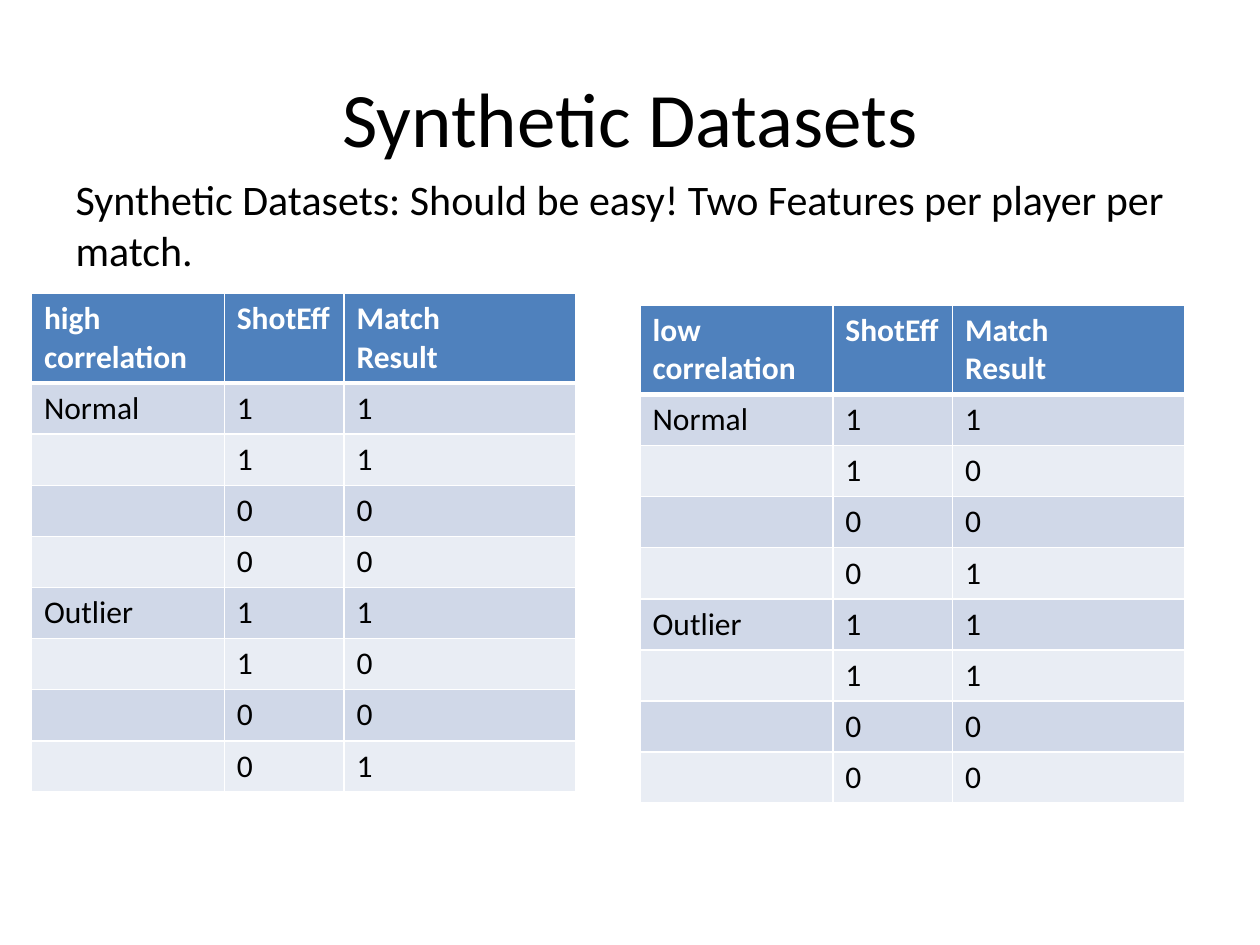
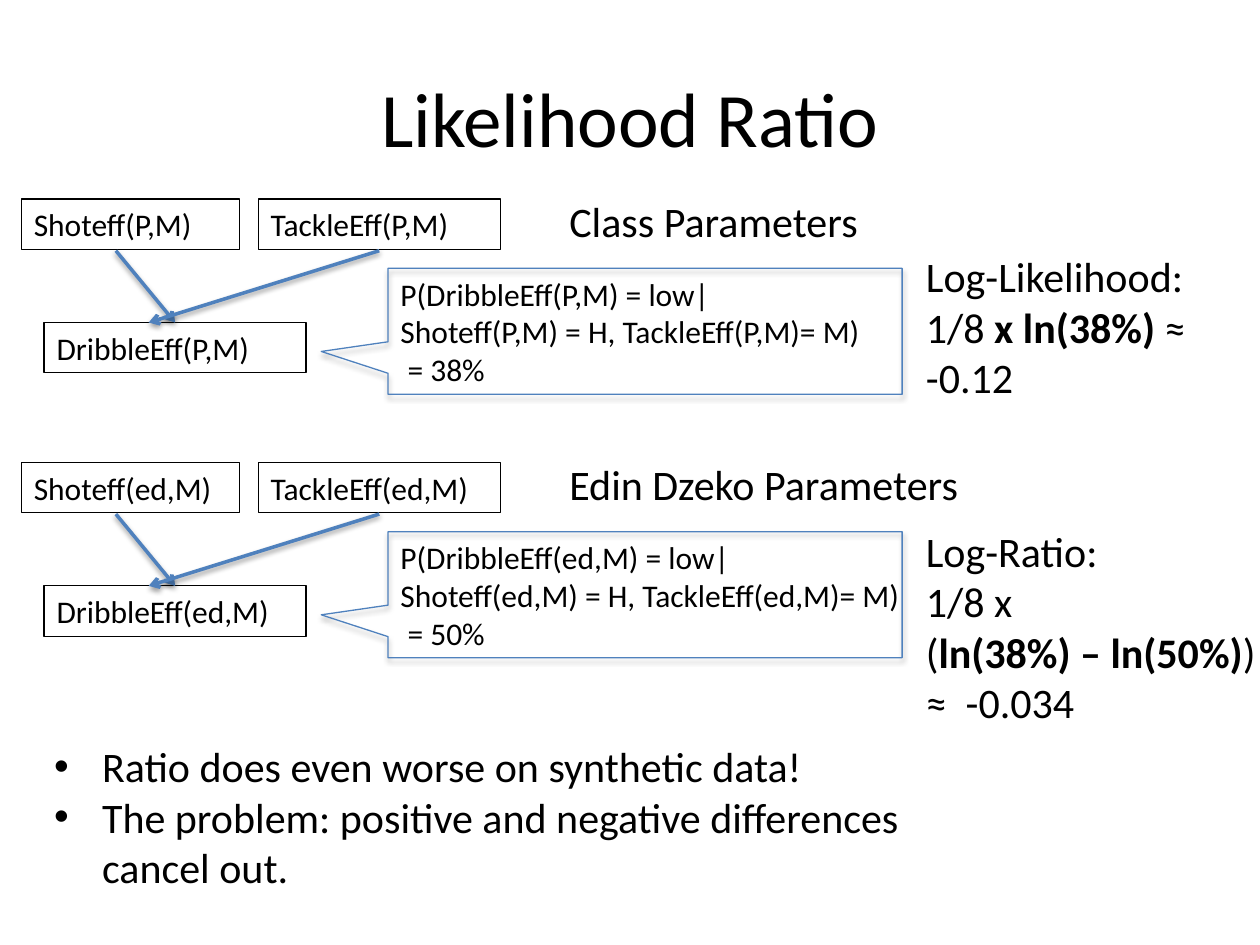
from lxml import etree
from pptx import Presentation
from pptx import util as u
from pptx.dml.color import RGBColor
from pptx.enum import shapes, text
from pptx.oxml import ns

BLACK, WHITE, BLUE = "000000", "FFFFFF", "4F81BD"
BANDS = ["D0D8E8", "E9EDF4"]
TITLE = {"size": u.Pt(44), "name": "Calibri"}
BODY = {"size": u.Pt(24), "name": "Calibri"}
SMALL = {"size": u.Pt(18), "name": "Calibri"}
HEAD = {**SMALL, "bold": True}
COLS = [1.53, 0.95, 1.84]
TABLE_H, HEAD_H = 3.94, 0.7


def rgb(code):
    """Turn a hex string into a colour."""
    return RGBColor.from_string(code)


def inches(*vals):
    """Turn plain numbers into lengths."""
    return [u.Inches(val) for val in vals]


def node(parent, tag, **attrs):
    """Append a drawing element with its attributes."""
    return etree.SubElement(parent, ns.qn(tag), {key: str(val) for key, val in attrs.items()})


def solid(parent, code, alpha=None):
    """Append a colour, with an opacity in percent if given."""
    mark = node(parent, "a:srgbClr", val=code)
    if alpha:
        node(mark, "a:alpha", val=alpha * 1000)


def shade(shape, alpha, dist):
    """Give a shape a soft shadow straight below it."""
    list_ = node(shape.element.spPr, "a:effectLst")
    drop = node(list_, "a:outerShdw", blurRad=u.Pt(3.1), dist=u.Pt(dist),
                dir=90 * 60000, rotWithShape=0)
    solid(drop, BLACK, alpha)


def style(font, form, color=BLACK):
    """Set font values from a dict, then the colour."""
    for key, val in form.items():
        setattr(font, key, val)
    font.color.rgb = rgb(color)


def write(frame, paras, form, color=BLACK):
    """Fill a frame; a paragraph is a string or a list of (string, bold)."""
    for num, para in enumerate(paras):
        line = frame.add_paragraph() if num else frame.paragraphs[0]
        for words, bold in [(para, form.get("bold", False))] if isinstance(para, str) else para:
            for part, piece in enumerate(words.split("\n")):
                if part:
                    line.add_line_break()
                run = line.add_run()
                run.text = piece
                style(run.font, {**form, "bold": bold}, color)


def place(holder, box, paras, form):
    """Move a placeholder and write its text."""
    holder.left, holder.top, holder.width, holder.height = inches(*box)
    holder.text_frame.auto_size = text.MSO_AUTO_SIZE.NONE
    write(holder.text_frame, paras, form)


def start(deck, title):
    """Add a slide with its title and return it with its body."""
    slide = deck.slides.add_slide(deck.slide_layouts[1])
    place(slide.shapes.title, (0.5, 0.3, 9, 1.25), [title], TITLE)
    return slide, slide.placeholders[1]


def indent(para, size, bullet=None):
    """Set a hanging indent and a bullet, or none."""
    props = para._p.get_or_add_pPr()
    props.set("marL", str(u.Inches(size)))
    props.set("indent", str(-u.Inches(size)))
    if bullet:
        node(props, "a:buChar", char=bullet)
    else:
        node(props, "a:buNone")


def note(parts, box, paras, form, edge=None):
    """Add a text box, outlined if an edge colour is given."""
    item = parts.add_textbox(*inches(*box))
    item.text_frame.word_wrap = True
    item.text_frame.auto_size = text.MSO_AUTO_SIZE.SHAPE_TO_FIT_TEXT
    write(item.text_frame, paras, form)
    if edge:
        item.line.color.rgb = rgb(edge)
        item.line.width = u.Pt(0.75)


def arrow(parts, ends):
    """Add a shadowed blue arrow."""
    line = parts.add_connector(shapes.MSO_CONNECTOR.STRAIGHT, *inches(*ends))
    line.line.color.rgb = rgb(BLUE)
    line.line.width = u.Pt(2)
    node(line.element.spPr.find(ns.qn("a:ln")), "a:tailEnd", type="arrow")
    shade(line, 38, 1.6)


def paint(cell, words, form, color, fill, base):
    """Write, border and fill one table cell."""
    if words:
        write(cell.text_frame, [words], form, color)
    props = cell._tc.get_or_add_tcPr()
    for side, width in zip("LRTB", (1, 1, 1, base)):
        edge = node(props, f"a:ln{side}", w=u.Pt(width))
        solid(node(edge, "a:solidFill"), WHITE)
    cell.fill.solid()
    cell.fill.fore_color.rgb = rgb(fill)


def grid(slide, left, top, level, wins):
    """Add a table of shot efficiency against match result."""
    names = ["Normal", "", "", "", "Outlier", "", "", ""]
    rows = [(f"{level} correlation", "ShotEff", "Match \nResult"), *zip(names, "11001100", wins)]
    frame = slide.shapes.add_table(len(rows), len(COLS), *inches(left, top, sum(COLS), TABLE_H))
    table = frame.table
    for col, width in zip(table.columns, COLS):
        col.width = u.Inches(width)
    for num, row in enumerate(rows):
        table.rows[num].height = u.Inches((TABLE_H - HEAD_H) / len(names) if num else HEAD_H)
        look = (SMALL, BLACK, BANDS[(num - 1) % 2], 1) if num else (HEAD, WHITE, BLUE, 3)
        for pos, words in enumerate(row):
            paint(table.cell(num, pos), words, *look)


def net(slide, left, top, who):
    """Add two parent nodes with arrows to their child node."""
    parts = slide.shapes.add_group_shape().shapes
    for name, dx, dy, width in [("Shoteff", 0, 0, 1.73), ("DribbleEff", 0.18, 0.98, 2.08),
                                ("TackleEff", 1.88, 0, 1.92)]:
        note(parts, (left + dx, top + dy, width, 0.4), [f"{name}({who},M)"], SMALL, BLACK)
    for tail, head in [(0.75, 1.22), (2.84, 1.01)]:
        arrow(parts, (left + tail, top + 0.41, left + head, top + 0.98))


def callout(slide, left, top, who, odds):
    """Add a callout that states a conditional probability."""
    bubble = slide.shapes.add_shape(shapes.MSO_SHAPE.RECTANGULAR_CALLOUT,
                                    *inches(left, top, 4.08, 1))
    bubble.adjustments[0], bubble.adjustments[1] = -0.63, 0.16
    bubble.fill.background()
    bubble.line.color.rgb = rgb(BLUE)
    bubble.line.width = u.Pt(0.75)
    shade(bubble, 35, 1.8)
    paras = [f"P(DribbleEff({who},M) = low|",
             f"Shoteff({who},M) = H, TackleEff({who},M)= M)", f" = {odds}"]
    note(slide.shapes, (left, top, 4.25, 1.01), paras, SMALL)


def panel(slide, left, top, who, odds, label):
    """Add one model: its net, its callout and its label."""
    net(slide, left, top, who)
    callout(slide, left + 2.91, top + 0.55, who, odds)
    note(slide.shapes, (left + 4.25, top - 0.08, 3.75, 0.5), [label], BODY)


def data(deck):
    """Build the slide of synthetic datasets."""
    slide, body = start(deck, "Synthetic Datasets")
    place(body, (0.5, 1.33, 9, 0.58),
          ["Synthetic Datasets: Should be easy! Two Features per player per match."], BODY)
    indent(body.text_frame.paragraphs[0], 0)
    grid(slide, 0.25, 2.33, "high", "11001001")
    grid(slide, 5.08, 2.42, "low", "10011100")


def ratio(deck):
    """Build the slide of the likelihood ratio."""
    slide, body = start(deck, "Likelihood Ratio")
    panel(slide, 0.17, 1.58, "P", "38%", "Class Parameters")
    panel(slide, 0.17, 3.67, "ed", "50%", "Edin Dzeko Parameters")
    note(slide.shapes, (7.25, 1.94, 2.58, 1.31),
         ["Log-Likelihood:", [("1/8 ", False), ("x ln(38%) ", True), ("≈  -0.12", False)]], BODY)
    note(slide.shapes, (7.25, 4.12, 3, 1.72),
         ["Log-Ratio:", [("1/8 x \n(", False), ("ln(38%) – ln(50%)", True),
                         (") ≈  -0.034", False)]], BODY)
    place(body, (0.33, 5.83, 7.17, 1.31),
          ["Ratio does even worse on synthetic data!",
           "The problem: positive and negative differences cancel out."], BODY)
    for para in body.text_frame.paragraphs:
        para.space_before = u.Pt(0)
        indent(para, 0.38, "•")


def main():
    """Build and save the deck."""
    deck = Presentation()
    deck.slide_width, deck.slide_height = inches(10, 7.5)
    data(deck)
    ratio(deck)
    deck.save("out.pptx")


if __name__ == "__main__":
    main()
